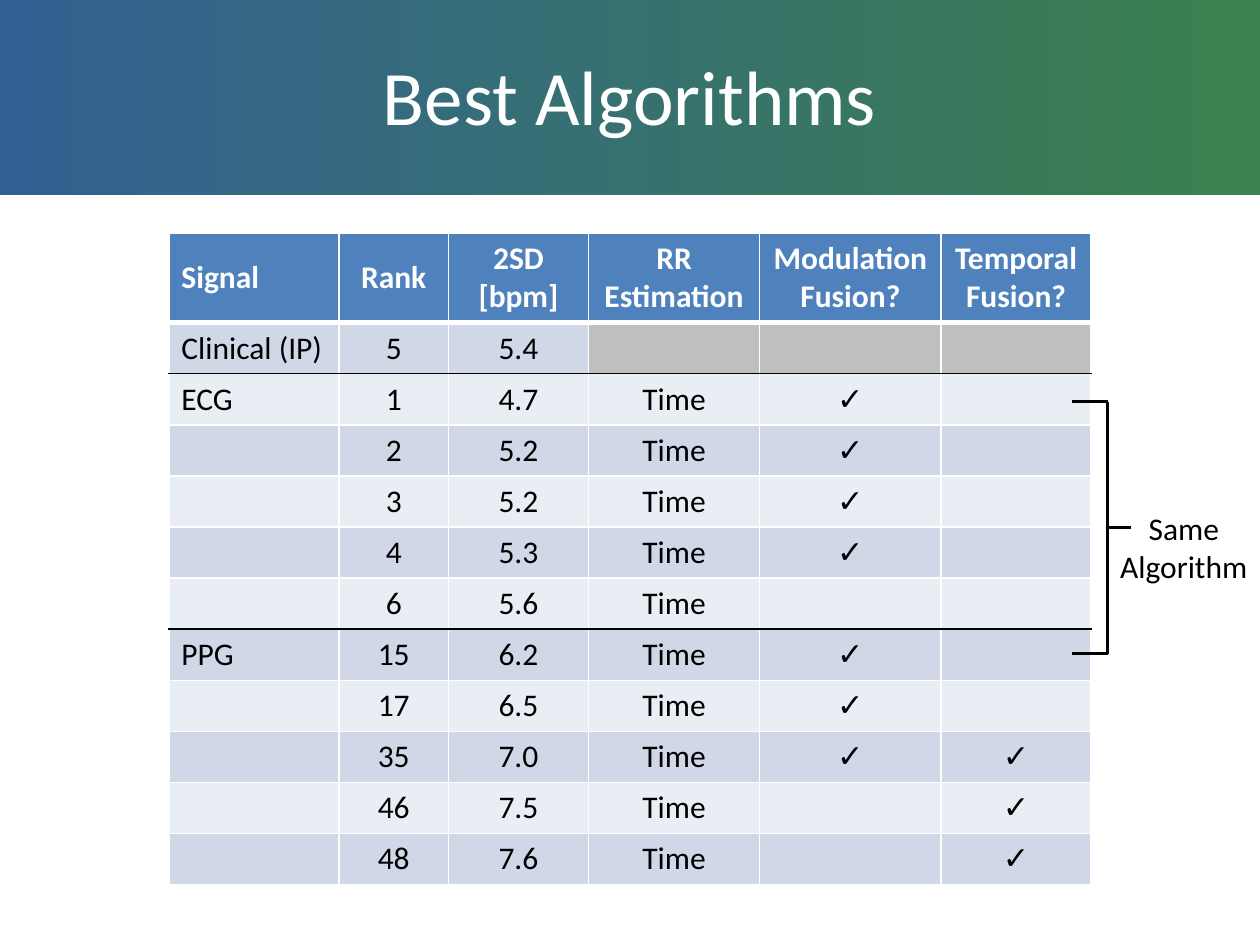
import pptx
import pptx.util
import pptx.dml.color
import pptx.enum.shapes
import pptx.enum.text
import pptx.oxml.ns
from dataclasses import dataclass
from lxml import etree

Inches = pptx.util.Inches
Pt = pptx.util.Pt
ALIGN = pptx.enum.text.PP_ALIGN
MIDDLE = pptx.enum.text.MSO_ANCHOR.MIDDLE


@dataclass(frozen=True)
class Theme:
    font: str = "Calibri"
    title_size: int = 44
    body_size: int = 18
    white: str = "FFFFFF"
    black: str = "000000"
    band_left: str = "326092"
    band_right: str = "3B814D"
    header: str = "4F81BD"
    dark_row: str = "D0D8E8"
    light_row: str = "E9EDF4"
    unused: str = "BFBFBF"
    rule: float = 1
    header_rule: float = 3
    bracket: float = 1.75


THEME = Theme()
TICK = "✓"
HEADERS = ["Signal", "Rank", "2SD [bpm]", "RR Estimation",
           "Modulation Fusion?", "Temporal Fusion?"]
ROWS = [
    ["Clinical (IP)", "5", "5.4", "", "", ""],
    ["ECG", "1", "4.7", "Time", TICK, ""],
    ["", "2", "5.2", "Time", TICK, ""],
    ["", "3", "5.2", "Time", TICK, ""],
    ["", "4", "5.3", "Time", TICK, ""],
    ["", "6", "5.6", "Time", "", ""],
    ["PPG", "15", "6.2", "Time", TICK, ""],
    ["", "17", "6.5", "Time", TICK, ""],
    ["", "35", "7.0", "Time", TICK, TICK],
    ["", "46", "7.5", "Time", "", TICK],
    ["", "48", "7.6", "Time", "", TICK],
]
COLUMN_WIDTHS = [1.35, 0.87, 1.11, 1.36, 1.44, 1.19]
HEADER_HEIGHT = 0.7
GROUP_STARTS = [i for i, row in enumerate(ROWS, 1) if i > 1 and row[0]]


def rgb(color):
    return pptx.dml.color.RGBColor.from_string(color)


def write(tf, text, size=THEME.body_size, color=THEME.black, bold=False, align=ALIGN.CENTER):
    p = tf.paragraphs[0]
    p.alignment = align
    r = p.add_run()
    r.text = text
    r.font.name = THEME.font
    r.font.size = Pt(size)
    r.font.bold = bold
    r.font.color.rgb = rgb(color)


def set_borders(cell, **sides):
    qn = pptx.oxml.ns.qn
    tcPr = cell._tc.get_or_add_tcPr()
    for i, side in enumerate("LRTB"):
        color, width = sides.get(side, (THEME.white, THEME.rule))
        ln = etree.Element(qn("a:ln" + side), w=str(Pt(width)))
        fill = etree.SubElement(ln, qn("a:solidFill"))
        etree.SubElement(fill, qn("a:srgbClr"), val=color)
        tcPr.insert(i, ln)


def add_title(s, left, top, width, height):
    band = s.shapes.add_shape(pptx.enum.shapes.MSO_SHAPE.RECTANGLE,
                              Inches(left), Inches(top), Inches(width), Inches(height))
    band.shadow.inherit = False
    band.line.fill.background()
    band.fill.gradient()
    band.fill.gradient_angle = 0
    for stop, color in zip(band.fill.gradient_stops, (THEME.band_left, THEME.band_right)):
        stop.color.rgb = rgb(color)
    title = s.shapes.title
    title.element.addprevious(band.element)
    title.left, title.top = Inches(0.5), Inches(top + 0.13)
    title.width, title.height = Inches(9), Inches(1.25)
    title.text_frame.vertical_anchor = MIDDLE
    write(title.text_frame, "Best Algorithms", size=THEME.title_size, color=THEME.white)


def cell_fill(i, j):
    if i == 0:
        return THEME.header
    if i == 1 and j > 2:
        return THEME.unused
    return THEME.dark_row if i % 2 else THEME.light_row


def add_ranking(s, left, top, width, height):
    table = s.shapes.add_table(len(ROWS) + 1, len(HEADERS), Inches(left), Inches(top),
                               Inches(width), Inches(height)).table
    for column, w in zip(table.columns, COLUMN_WIDTHS):
        column.width = Inches(w)
    for i, texts in enumerate([HEADERS] + ROWS):
        row_height = (height - HEADER_HEIGHT) / len(ROWS) if i else HEADER_HEIGHT
        table.rows[i].height = Inches(row_height)
        sides = {}
        if i in GROUP_STARTS:
            sides["T"] = (THEME.black, THEME.rule)
        if i + 1 in GROUP_STARTS:
            sides["B"] = (THEME.black, THEME.rule)
        if i < 2:
            sides["B" if i == 0 else "T"] = (THEME.white, THEME.header_rule)
        for j, text in enumerate(texts):
            cell = table.cell(i, j)
            cell.vertical_anchor = MIDDLE
            cell.fill.solid()
            cell.fill.fore_color.rgb = rgb(cell_fill(i, j))
            set_borders(cell, **sides)
            if text:
                write(cell.text_frame, text, bold=i == 0,
                      color=THEME.black if i else THEME.white,
                      align=ALIGN.CENTER if j else ALIGN.LEFT)


def add_line(s, x1, y1, x2, y2):
    line = s.shapes.add_connector(pptx.enum.shapes.MSO_CONNECTOR.STRAIGHT,
                                  Inches(x1), Inches(y1), Inches(x2), Inches(y2))
    line.line.color.rgb = rgb(THEME.black)
    line.line.width = Pt(THEME.bracket)
    etree.SubElement(line.element.spPr, pptx.oxml.ns.qn("a:effectLst"))


def add_bracket(s, left, top, width, height):
    spine, bottom, middle = left + 0.28, top + height, top + height / 2
    add_line(s, left, top, spine, top)
    add_line(s, left, bottom, spine, bottom)
    add_line(s, spine, top, spine, bottom)
    add_line(s, spine, middle, left + width, middle)
    label = s.shapes.add_textbox(Inches(spine), Inches(middle - 0.2), Inches(1.21), Inches(0.71))
    label.text_frame.word_wrap = True
    write(label.text_frame, "Same Algorithm")


def main():
    prs = pptx.Presentation()
    prs.slide_width, prs.slide_height = Inches(10), Inches(7.5)
    s = prs.slides.add_slide(prs.slide_layouts[5])
    add_title(s, -0.04, 0, 10.08, 1.55)
    add_ranking(s, 1.34, 1.85, 7.32, 5.16)
    add_bracket(s, 8.51, 3.19, 0.47, 2)
    prs.save("out.pptx")


if __name__ == "__main__":
    main()
